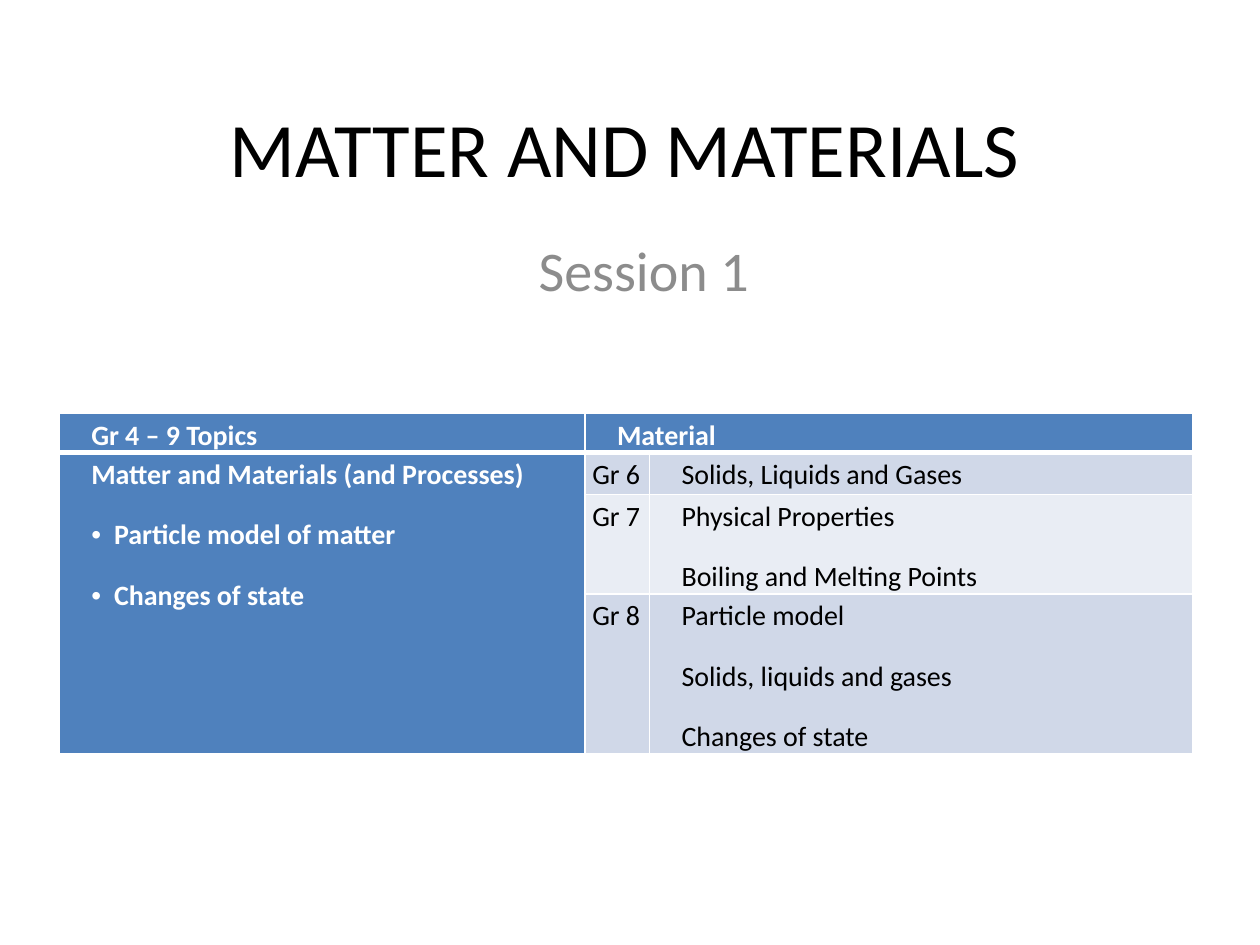
from dataclasses import dataclass

from lxml import etree
from pptx import Presentation
from pptx.dml.color import RGBColor
from pptx.enum.text import MSO_ANCHOR, PP_ALIGN
from pptx.oxml.ns import qn
from pptx.util import Cm, Pt

MIDDLE, TOP, CENTER = MSO_ANCHOR.MIDDLE, MSO_ANCHOR.TOP, PP_ALIGN.CENTER


@dataclass(frozen=True)
class Theme:
    font: str = "Calibri"
    title_size: int = 44
    subtitle_size: int = 32
    table_size: int = 16
    ink: str = "000000"
    muted: str = "8C8C8C"
    white: str = "FFFFFF"
    accent: str = "4F81BD"
    bands: tuple = ("D0D8E8", "E9EDF4")
    rule: int = 1
    header_rule: int = 3


THEME = Theme()

TITLE = "MATTER AND MATERIALS"
SUBTITLE = "Session 1"
HEADERS = ("Gr 4 – 9 Topics", "Material")
TOPIC = "Matter and Materials (and Processes)"
SUBTOPICS = ["Particle model of matter", "Changes of state"]
GRADES = [
    ("Gr 6", ["Solids, Liquids and Gases"]),
    ("Gr 7", ["Physical Properties", "Boiling and Melting Points"]),
    ("Gr 8", ["Particle model", "Solids, liquids and gases", "Changes of state"]),
]

# Left, top, width, height in centimetres
TITLE_BOX = (1.8, 0.91, 21.59, 4.09)
SUBTITLE_BOX = (4.09, 4.62, 17.78, 1.8)
TABLE_BOX = (1.19, 8.33, 22.86, 6.63)
COLUMN_WIDTHS = (10.6, 1.3, 10.96)
ROW_HEIGHTS = (0.43, 0.84, 1.22, 2.01)
CELL_INSET = 0.15
TEXT_INDENT = 0.5
BULLET_INDENT = 0.46


def format_runs(paragraph, size, color, bold=False):
    for run in paragraph.runs:
        run.font.name = THEME.font
        run.font.size = Pt(size)
        run.font.bold = bold
        run.font.color.rgb = RGBColor.from_string(color)


def fill_heading(placeholder, box, text, size, color, anchor):
    placeholder.left, placeholder.top, placeholder.width, placeholder.height = map(Cm, box)
    frame = placeholder.text_frame
    frame.text = text
    frame.vertical_anchor = anchor
    frame.paragraphs[0].alignment = CENTER
    format_runs(frame.paragraphs[0], size, color)


def set_borders(cell, top, bottom):
    properties = cell._tc.get_or_add_tcPr()
    widths = {"lnL": THEME.rule, "lnR": THEME.rule, "lnT": top, "lnB": bottom}
    for position, (side, width) in enumerate(widths.items()):
        line = etree.Element(qn(f"a:{side}"), w=str(Pt(width)))
        fill = etree.SubElement(line, qn("a:solidFill"))
        etree.SubElement(fill, qn("a:srgbClr"), val=THEME.white)
        properties.insert(position, line)


def write_cell(cell, lines, color, bold=False, indent=TEXT_INDENT, bulleted_from=None):
    """Write one paragraph per line; those from bulleted_from on get a bullet."""
    cell.margin_left = cell.margin_right = Cm(CELL_INSET)
    cell.margin_top = cell.margin_bottom = 0
    cell.text_frame.text = "\n".join(lines)
    for index, paragraph in enumerate(cell.text_frame.paragraphs):
        paragraph.line_spacing = 1.15
        paragraph.space_before = paragraph.space_after = Pt(6)
        format_runs(paragraph, THEME.table_size, color, bold)
        properties = paragraph._p.get_or_add_pPr()
        hanging = BULLET_INDENT if bulleted_from is not None else 0
        properties.set("marL", str(Cm(indent + hanging)))
        properties.set("indent", str(-Cm(hanging)))
        if bulleted_from is not None and index >= bulleted_from:
            etree.SubElement(properties, qn("a:buFont"), typeface="Arial")
            etree.SubElement(properties, qn("a:buChar"), char="•")


def add_topic_table(slide):
    frame = slide.shapes.add_table(
        len(ROW_HEIGHTS), len(COLUMN_WIDTHS), *map(Cm, TABLE_BOX))
    table = frame.table
    for column, width in zip(table.columns, COLUMN_WIDTHS):
        column.width = Cm(width)
    for row, height in zip(table.rows, ROW_HEIGHTS):
        row.height = Cm(height)
    frame.height = Cm(TABLE_BOX[3])

    for r in range(len(ROW_HEIGHTS)):
        for c in range(len(COLUMN_WIDTHS)):
            cell = table.cell(r, c)
            is_heading = r == 0 or c == 0
            color = THEME.accent if is_heading else THEME.bands[(r - 1) % 2]
            cell.fill.solid()
            cell.fill.fore_color.rgb = RGBColor.from_string(color)
            set_borders(cell,
                        top=THEME.header_rule if r == 1 else THEME.rule,
                        bottom=THEME.header_rule if r == 0 else THEME.rule)

    table.cell(0, 1).merge(table.cell(0, 2))
    table.cell(1, 0).merge(table.cell(len(GRADES), 0))
    for c, header in enumerate(HEADERS):
        write_cell(table.cell(0, c), [header], THEME.white, bold=True)
    write_cell(table.cell(1, 0), [TOPIC, *SUBTOPICS], THEME.white,
               bold=True, bulleted_from=1)
    for r, (grade, materials) in enumerate(GRADES, start=1):
        write_cell(table.cell(r, 1), [grade], THEME.ink, indent=0)
        write_cell(table.cell(r, 2), materials, THEME.ink)


def main():
    deck = Presentation()
    deck.slide_width, deck.slide_height = Cm(25.4), Cm(19.05)
    slide = deck.slides.add_slide(deck.slide_layouts[0])
    fill_heading(slide.shapes.title, TITLE_BOX, TITLE,
                 THEME.title_size, THEME.ink, MIDDLE)
    fill_heading(slide.placeholders[1], SUBTITLE_BOX, SUBTITLE,
                 THEME.subtitle_size, THEME.muted, TOP)
    add_topic_table(slide)
    deck.save("out.pptx")


if __name__ == "__main__":
    main()
